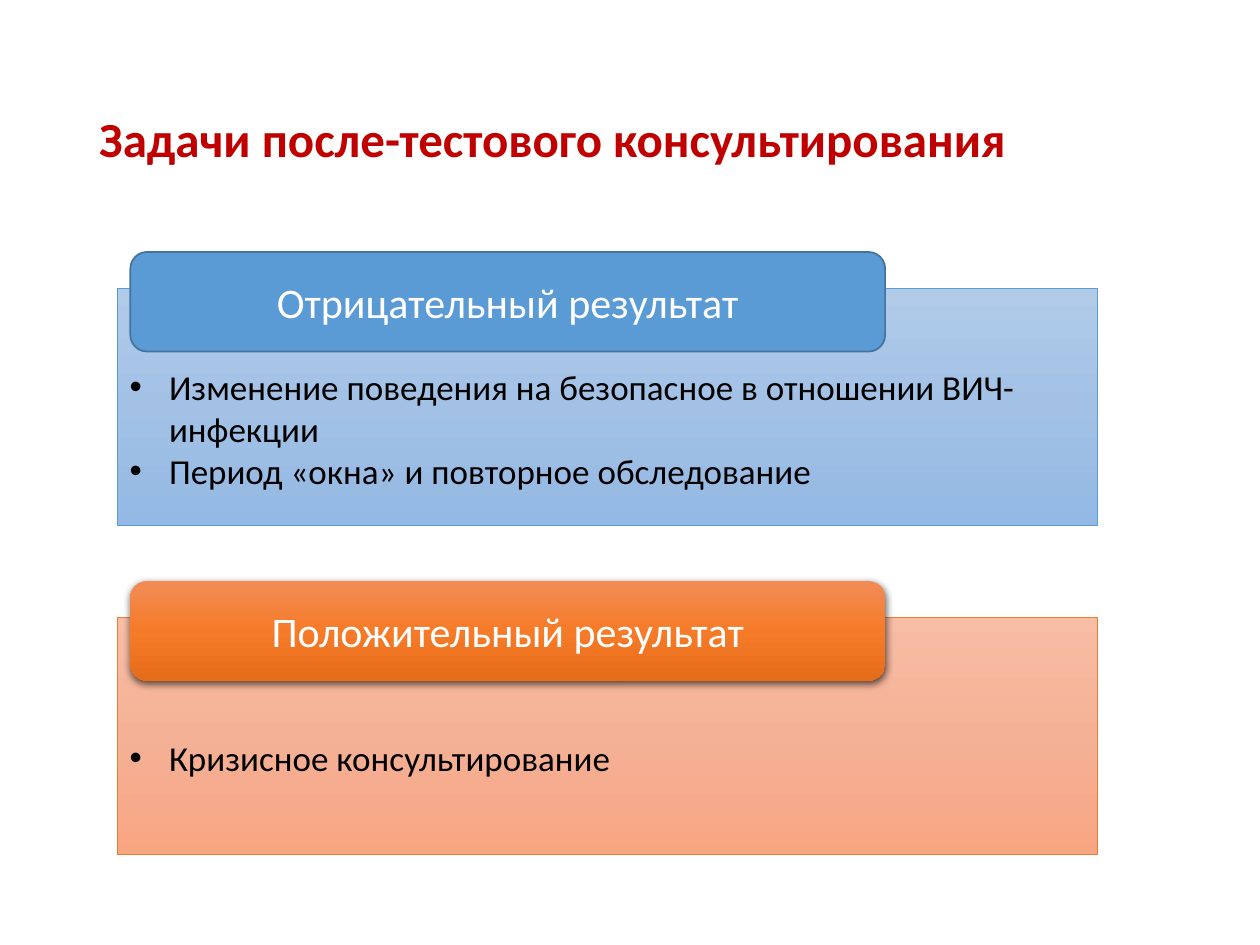
from dataclasses import dataclass
from typing import Optional

from lxml import etree
from pptx import Presentation
from pptx import util as u
from pptx.dml.color import RGBColor
from pptx.enum import shapes, text
from pptx.oxml import ns

FONT = "Calibri"
COLORS = {
    "title": "C00000",
    "body": "000000",
    "heading": "FFFFFF",
    "shadow": "000000",
    "blue": "5B9BD5",
    "blue_edge": "43739E",
    "orange": "ED7D31",
}
LEFT, PANEL_WIDTH, PANEL_HEIGHT = 67, 560, 135.4
HEADING_WIDTH, HEADING_HEIGHT, HEADING_RISE = 431.3, 56.9, 20.9
HEADING_INDENT = 7.5
BULLET_INDENT = 22.5


@dataclass
class Result:
    top: float
    heading: str
    tasks: list[str]
    panel_fill: list[str]
    panel_edge: str
    heading_fill: list[str]
    heading_edge: Optional[str] = None
    raised: bool = False


RESULTS = [
    Result(
        164.9,
        "Отрицательный результат",
        [
            "Изменение поведения на безопасное в отношении ВИЧ-инфекции",
            "Период «окна» и повторное обследование",
        ],
        ["B1CBE9", "A3C1E5", "93B9E4"],
        "blue",
        [COLORS["blue"]],
        heading_edge="blue_edge",
    ),
    Result(
        352.9,
        "Положительный результат",
        ["Кризисное консультирование"],
        ["F7BDA5", "F5B196", "F8A582"],
        "orange",
        ["F18C57", "F67B28", "E56C19"],
        raised=True,
    ),
]


def rgb(name: str) -> RGBColor:
    return RGBColor.from_string(COLORS[name])


def add_node(parent, tag: str, **attributes):
    node = etree.SubElement(parent, ns.qn(tag))
    for key, value in attributes.items():
        node.set(key, str(value))
    return node


def paint(shape, stops: list[str]) -> None:
    if len(stops) == 1:
        shape.fill.solid()
        shape.fill.fore_color.rgb = RGBColor.from_string(stops[0])
        return
    shape.fill.gradient()
    shape.fill.gradient_angle = 270
    stop_list = shape._element.spPr.find(".//" + ns.qn("a:gsLst"))
    for old in list(stop_list):
        stop_list.remove(old)
    for index, color in enumerate(stops):
        position = 100000 * index // (len(stops) - 1)
        add_node(add_node(stop_list, "a:gs", pos=position), "a:srgbClr", val=color)


def outline(shape, color: Optional[str], width: float) -> None:
    if color is None:
        shape.line.fill.background()
        return
    shape.line.color.rgb = rgb(color)
    shape.line.width = u.Pt(width)


def cast_shadow(shape) -> None:
    effects = shape._element.spPr.find(ns.qn("a:effectLst"))
    shadow = add_node(effects, "a:outerShdw", blurRad=u.Pt(4.5), dist=u.Pt(1.5),
                      dir=5400000, algn="ctr", rotWithShape=0)
    color = add_node(shadow, "a:srgbClr", val=COLORS["shadow"])
    add_node(color, "a:alpha", val=63000)


def write(frame, lines: list[str], *, size: float, color: str, bold: bool = False,
          align=text.PP_ALIGN.LEFT, bullet: bool = False,
          spacing: Optional[float] = None) -> None:
    frame.word_wrap = True
    frame.vertical_anchor = text.MSO_ANCHOR.MIDDLE
    for index, line in enumerate(lines):
        para = frame.add_paragraph() if index else frame.paragraphs[0]
        para.alignment = align
        if spacing:
            para.line_spacing = spacing
        if bullet:
            properties = para._p.get_or_add_pPr()
            properties.set("marL", str(u.Pt(BULLET_INDENT)))
            properties.set("indent", str(-u.Pt(BULLET_INDENT)))
            add_node(properties, "a:buFont", typeface="Arial")
            add_node(properties, "a:buChar", char="•")
        span = para.add_run()
        span.text = line
        span.font.name = FONT
        span.font.size = u.Pt(size)
        span.font.bold = bold
        span.font.color.rgb = rgb(color)


def add_box(group, kind, left: float, top: float, width: float, height: float):
    box = group.shapes.add_shape(kind, u.Pt(left), u.Pt(top), u.Pt(width), u.Pt(height))
    box.shadow.inherit = False
    return box


def draw_result(page, result: Result) -> None:
    group = page.shapes.add_group_shape()
    panel = add_box(group, shapes.MSO_SHAPE.RECTANGLE, LEFT, result.top,
                    PANEL_WIDTH, PANEL_HEIGHT)
    paint(panel, result.panel_fill)
    outline(panel, result.panel_edge, 0.5)
    panel.text_frame.margin_top = u.Pt(28)
    write(panel.text_frame, result.tasks, size=20, color="body", bullet=True)

    heading = add_box(group, shapes.MSO_SHAPE.ROUNDED_RECTANGLE, LEFT + HEADING_INDENT,
                      result.top - HEADING_RISE, HEADING_WIDTH, HEADING_HEIGHT)
    paint(heading, result.heading_fill)
    outline(heading, result.heading_edge, 1)
    if result.raised:
        cast_shadow(heading)
    write(heading.text_frame, [result.heading], size=24, color="heading",
          align=text.PP_ALIGN.CENTER)


def main() -> None:
    deck = Presentation()
    deck.slide_width, deck.slide_height = u.Pt(720), u.Pt(540)
    page = deck.slides.add_slide(deck.slide_layouts[5])
    title = page.shapes.title
    title.left, title.top = u.Pt(49.5), u.Pt(28.8)
    title.width, title.height = u.Pt(621), u.Pt(104.4)
    write(title.text_frame, ["Задачи после-тестового консультирования"],
          size=28, color="title", bold=True, spacing=0.9)
    for result in RESULTS:
        draw_result(page, result)
    deck.save("out.pptx")


if __name__ == "__main__":
    main()
